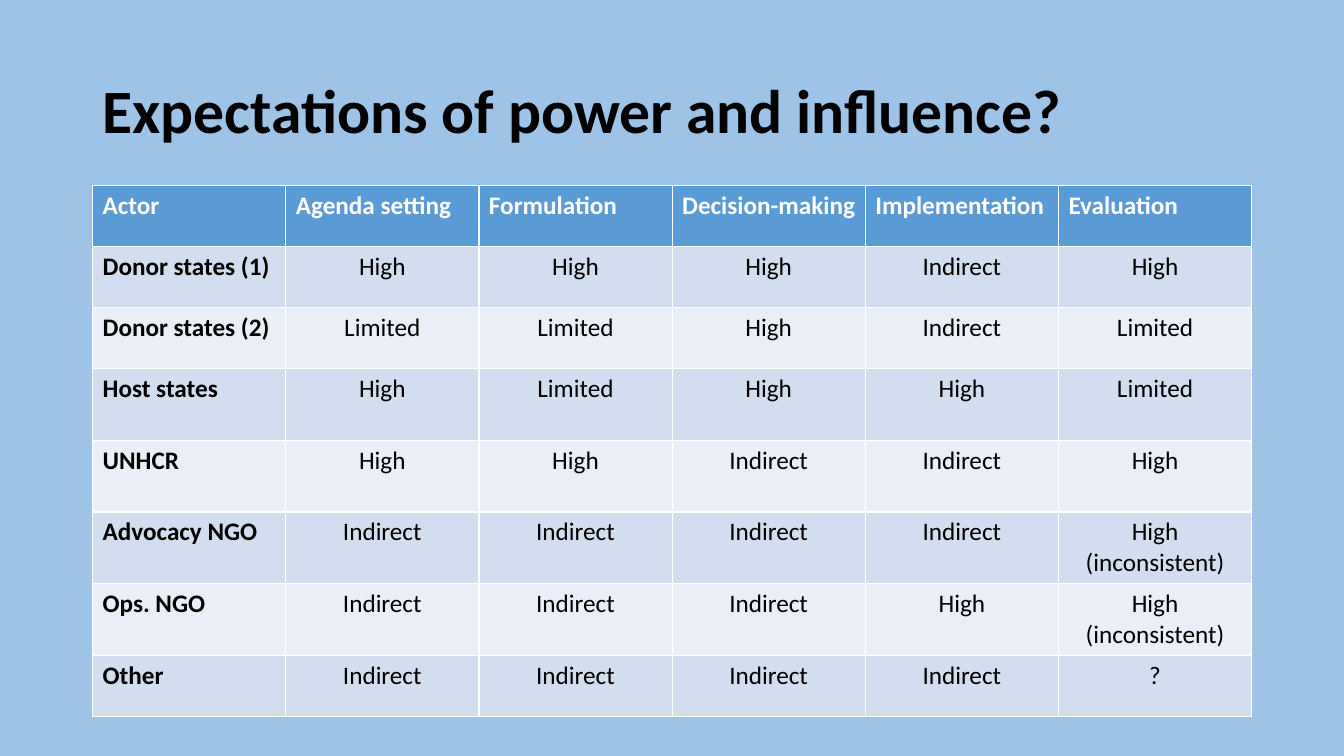
from dataclasses import dataclass

from pptx import Presentation
from pptx.dml.color import RGBColor
from pptx.enum.text import MSO_ANCHOR, PP_ALIGN
from pptx.slide import Slide
from pptx.text.text import TextFrame
from pptx.util import Pt

LEFT = PP_ALIGN.LEFT
CENTER = PP_ALIGN.CENTER
MIDDLE = MSO_ANCHOR.MIDDLE

BLACK = RGBColor(0x00, 0x00, 0x00)
WHITE = RGBColor(0xFF, 0xFF, 0xFF)
SKY = RGBColor(0x9D, 0xC3, 0xE6)
BLUE = RGBColor(0x5B, 0x9B, 0xD5)
BANDS = (RGBColor(0xD2, 0xDE, 0xEF), RGBColor(0xEA, 0xEF, 0xF7))

FONT = "Calibri"
EDGE = 66.1
WIDTH = 828
LOW = 43.6
TALL = 51.2


@dataclass
class Actor:
    name: str
    levels: tuple[str, ...]
    height: float = LOW


STAGES = ("Actor", "Agenda setting", "Formulation",
          "Decision-making", "Implementation", "Evaluation")
HIGH = "High"
SOME = "Limited"
VIA = "Indirect"
MIXED = "High\n(inconsistent)"
ACTORS = (
    Actor("Donor states (1)", (HIGH, HIGH, HIGH, VIA, HIGH)),
    Actor("Donor states (2)", (SOME, SOME, HIGH, VIA, SOME)),
    Actor("Host states", (HIGH, SOME, HIGH, HIGH, SOME), TALL),
    Actor("UNHCR", (HIGH, HIGH, VIA, VIA, HIGH), TALL),
    Actor("Advocacy NGO", (VIA, VIA, VIA, VIA, MIXED), TALL),
    Actor("Ops. NGO", (VIA, VIA, VIA, HIGH, MIXED), TALL),
    Actor("Other", (VIA, VIA, VIA, VIA, "?")),
)


def write(frame: TextFrame, text: str, size: float, color: RGBColor,
          bold: bool, align: PP_ALIGN) -> None:
    frame.text = text
    for line in frame.paragraphs:
        line.alignment = align
        for run in line.runs:
            run.font.name = FONT
            run.font.size = Pt(size)
            run.font.bold = bold
            run.font.color.rgb = color


def add_title(slide: Slide) -> None:
    title = slide.shapes.title
    title.left, title.top = Pt(EDGE), Pt(28.75)
    title.width, title.height = Pt(WIDTH), Pt(104.4)
    frame = title.text_frame
    frame.vertical_anchor = MIDDLE
    write(frame, "Expectations of power and influence?", 44, BLACK, True, LEFT)
    frame.paragraphs[0].line_spacing = 0.9


def add_grid(slide: Slide) -> None:
    heights = [LOW] + [actor.height for actor in ACTORS]
    rows = [STAGES] + [(actor.name, *actor.levels) for actor in ACTORS]
    table = slide.shapes.add_table(
        len(rows), len(STAGES), Pt(EDGE), Pt(132.5),
        Pt(WIDTH), Pt(sum(heights))).table
    for column in table.columns:
        column.width = Pt(WIDTH / len(STAGES))
    for r, (texts, height) in enumerate(zip(rows, heights)):
        table.rows[r].height = Pt(height)
        head = r == 0
        for c, text in enumerate(texts):
            cell = table.cell(r, c)
            cell.fill.solid()
            cell.fill.fore_color.rgb = BLUE if head else BANDS[(r - 1) % 2]
            label = head or c == 0
            write(cell.text_frame, text, 18, WHITE if head else BLACK,
                  label, LEFT if label else CENTER)


def main() -> None:
    deck = Presentation()
    deck.slide_width, deck.slide_height = Pt(960), Pt(540)
    slide = deck.slides.add_slide(deck.slide_layouts[5])
    slide.background.fill.solid()
    slide.background.fill.fore_color.rgb = SKY
    add_title(slide)
    add_grid(slide)
    deck.save("out.pptx")


if __name__ == "__main__":
    main()
